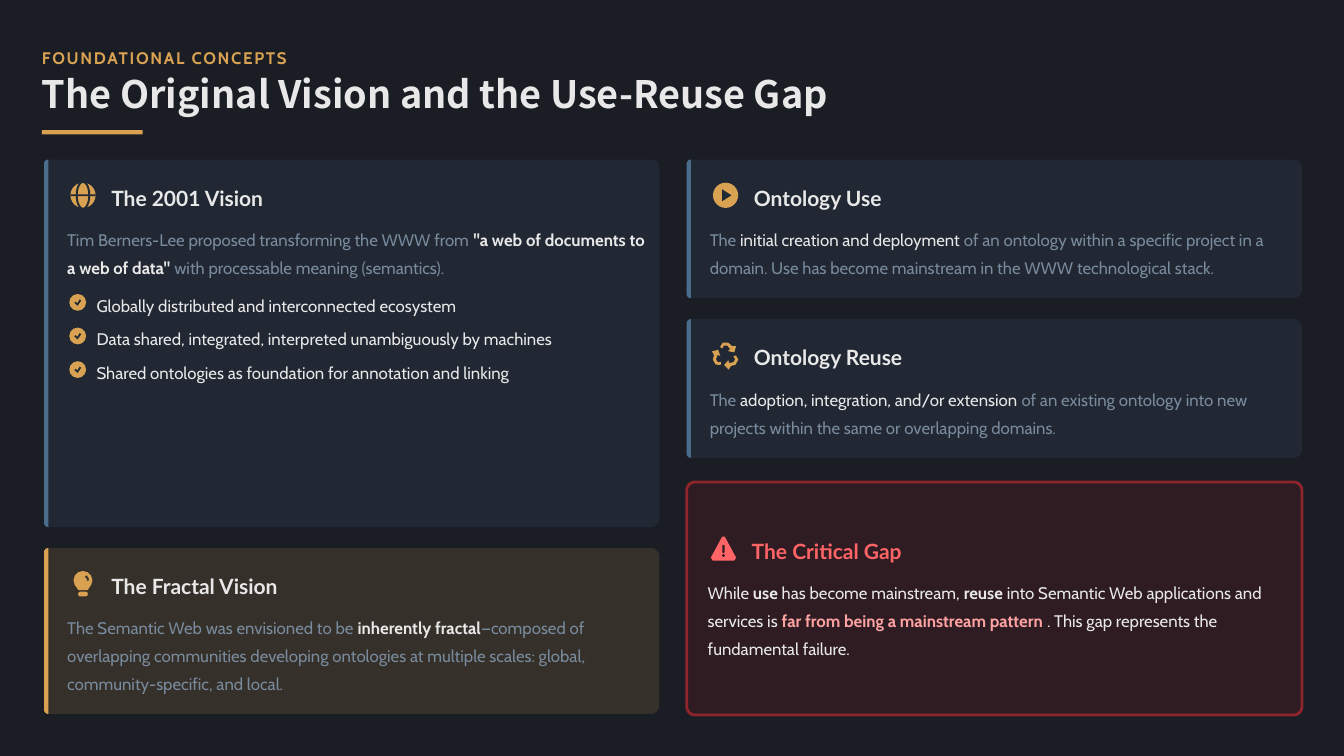
from math import cos, radians, sin

from lxml.etree import SubElement
from pptx import Presentation
from pptx.dml.color import RGBColor
from pptx.enum.shapes import MSO_SHAPE
from pptx.enum.text import MSO_ANCHOR
from pptx.oxml.ns import qn
from pptx.util import Inches, Pt

COLS, ROWS = 160, 90
BG, BLUE, GOLD, LIGHT, MUTED = "1A1D24", "4A6D8C", "D8A252", "E8E8E8", "788A9C"
MAROON, RED, CORAL, PINK = "82181A", "FB2C36", "FF6467", "FFA2A2"


def rgb(value):
    return RGBColor.from_string(value)


def blend(top, base, share):
    pairs = zip(bytes.fromhex(top), bytes.fromhex(base))
    return "".join(f"{round(a * share + b * (1 - share)):02X}" for a, b in pairs)


def fade(fill, percent):
    color = fill._xPr.find(f"{qn('a:solidFill')}/{qn('a:srgbClr')}")
    SubElement(color, qn("a:alpha")).set("val", str(percent * 1000))


class Deck:
    def __init__(self):
        self.prs = Presentation()
        self.prs.slide_width, self.prs.slide_height = Inches(40 / 3), Inches(7.5)
        self.unit = self.prs.slide_height / ROWS
        self.s = self.prs.slides.add_slide(self.prs.slide_layouts[6])
        self.s.background.fill.solid()
        self.s.background.fill.fore_color.rgb = rgb(BG)

    def grid(self, *values):
        return [round(v * self.unit) for v in values]

    def paint(self, sp, color, alpha=100):
        sp.shadow.inherit = False
        sp.line.fill.background()
        sp.fill.solid()
        sp.fill.fore_color.rgb = rgb(color)
        if alpha < 100:
            fade(sp.fill, alpha)
        return sp

    def shape(self, kind, x, y, w, h, color):
        return self.paint(self.s.shapes.add_shape(kind, *self.grid(x, y, w, h)), color)

    def disc(self, cx, cy, d, color):
        return self.shape(MSO_SHAPE.OVAL, cx - d / 2, cy - d / 2, d, d, color)

    def poly(self, points, color, alpha=100):
        start, *rest = [self.grid(*point) for point in points]
        builder = self.s.shapes.build_freeform(*start)
        builder.add_line_segments(rest, close=True)
        return self.paint(builder.convert_to_shape(), color, alpha)

    def panel(self, x, y, w, h, left, right, color, alpha=100):
        corners = [(x + left, y + left, left, 180), (x + w - right, y + right, right, 270),
                   (x + w - right, y + h - right, right, 0), (x + left, y + h - left, left, 90)]
        points = []
        for cx, cy, radius, start in corners:
            for turn in range(0, 91, 15) if radius else [0]:
                a = radians(start + turn)
                points.append((cx + radius * cos(a), cy + radius * sin(a)))
        return self.poly(points, color, alpha)

    def text(self, x, y, w, h, runs, size, font="Cabin", spacing=1.3, wrap=False, track=0):
        tf = self.s.shapes.add_textbox(*self.grid(x, y, w, h)).text_frame
        tf.margin_left = tf.margin_right = tf.margin_top = tf.margin_bottom = 0
        tf.vertical_anchor = MSO_ANCHOR.MIDDLE
        tf.word_wrap = wrap
        p = tf.paragraphs[0]
        p.line_spacing = spacing
        for words, color, bold in runs:
            r = p.add_run()
            r.text = words
            r.font.name, r.font.size, r.font.bold = font, Pt(size), bold
            r.font.color.rgb = rgb(color)
            rPr = r.font._element
            if track:
                rPr.set("spc", str(round(track * 100)))
            for tag in ("a:ea", "a:cs"):
                SubElement(rPr, qn(tag)).set("typeface", font)

    def globe(self, cx, cy, color, back):
        self.disc(cx, cy, 3, color)
        meridian = self.shape(MSO_SHAPE.OVAL, cx - 0.75, cy - 1.6, 1.5, 3.2, color)
        meridian.fill.background()
        meridian.line.color.rgb = rgb(back)
        meridian.line.width = Pt(1.4)
        self.shape(MSO_SHAPE.RECTANGLE, cx - 1.5, cy - 0.1, 3, 0.2, back)

    def bulb(self, cx, cy, color, back):
        self.disc(cx, cy - 0.4, 2.25, color)
        self.poly([(cx - 0.9, cy + 0.2), (cx + 0.9, cy + 0.2),
                   (cx + 0.57, cy + 0.75), (cx - 0.57, cy + 0.75)], color)
        self.panel(cx - 0.57, cy + 0.95, 1.14, 0.55, 0.25, 0.25, color)
        glint = self.shape(MSO_SHAPE.ARC, cx - 0.62, cy - 1, 1.24, 1.24, color)
        glint.fill.background()
        glint.adjustments[0], glint.adjustments[1] = 180, -90
        glint.line.color.rgb = rgb(back)
        glint.line.width = Pt(1.4)

    def play(self, cx, cy, color, back):
        self.disc(cx, cy, 3, color)
        self.poly([(cx - 0.4, cy - 0.7), (cx + 0.7, cy), (cx - 0.4, cy + 0.7)], back)

    def recycle(self, cx, cy, color, back):
        arrow = [(-0.65, -1.05), (-0.35, -1.55), (0.35, -1.55), (0.75, -1.15),
                 (1.25, -1.15), (1.05, -0.4), (0.3, -0.55), (0.55, -0.8),
                 (0.2, -1.2), (-0.2, -1.2), (-0.4, -0.85)]
        for a in (radians(turn) for turn in (0, 120, 240)):
            self.poly([(cx + x * cos(a) - y * sin(a), cy + 0.1 + x * sin(a) + y * cos(a))
                       for x, y in arrow], color)

    def warning(self, cx, cy, color, back):
        self.poly([(cx - 0.15, cy - 1.45), (cx + 0.15, cy - 1.45), (cx + 1.5, cy + 1.05),
                   (cx + 1.3, cy + 1.4), (cx - 1.3, cy + 1.4), (cx - 1.5, cy + 1.05)], color)
        self.panel(cx - 0.14, cy - 0.45, 0.28, 0.95, 0.13, 0.13, back)
        self.disc(cx, cy + 0.8, 0.32, back)

    def check(self, cx, cy, color, back):
        self.disc(cx, cy, 2, color)
        tick = [(-0.4, 0.05), (-0.25, -0.1), (-0.05, 0.1), (0.25, -0.35),
                (0.42, -0.22), (0, 0.4)]
        self.poly([(cx + x, cy + y) for x, y in tick], back)

    def card(self, x, y, h, icon, title, lines, runs, accent=BLUE, alert=False):
        w = 73.25
        if alert:
            back, color, dx, dy = blend(MAROON, BG, 0.2), CORAL, -0.25, 3.7
            sp = self.panel(x, y, w, h, 1, 1, MAROON, 20)
            sp.line.color.rgb = rgb(RED)
            sp.line.width = Pt(2)
            fade(sp.line.fill, 50)
        else:
            back, color, dx, dy = blend(accent, BG, 0.15), LIGHT, 0, 0
            self.panel(x, y, w, h, 0.5, 1, accent, 15)
            self.panel(x, y, 0.5, h, 0.5, 0, accent)
        x, y = x + dx, y + dy
        icon(x + 4.63, y + 4.25, CORAL if alert else GOLD, back)
        self.text(x + 8, y + 2.5, 23, 3.5, [(title, color, True)], 15, "Lato", 1.2)
        self.text(x + 2.75, y + 7.5, 69, 3.25 * lines, runs, 12, spacing=1.4, wrap=True)

    def checklist(self, x, y, items):
        back = blend(BLUE, BG, 0.15)
        for row, item in enumerate(items):
            top = y + 4 * row
            self.check(x + 1, top + 1, GOLD, back)
            self.text(x + 3.25, top - 0.5, 59, 3, [(item, LIGHT, False)], 12)


def main():
    deck = Deck()
    deck.text(5, 5, 151, 3, [("FOUNDATIONAL CONCEPTS", GOLD, True)], 12, track=1.2)
    deck.text(5, 9, 152, 5, [("The Original Vision and the Use-Reuse Gap", LIGHT, True)],
              27, "Noto Sans CJK SC", 0.9)
    deck.shape(MSO_SHAPE.RECTANGLE, 5, 15.5, 12, 0.5, GOLD)

    left, right = 5.25, 81.75
    deck.card(left, 19, 43.75, deck.globe, "The 2001 Vision", 2, [
        ("Tim Berners-Lee proposed transforming the WWW from ", MUTED, False),
        ('"a web of documents to a web of data"', LIGHT, True),
        (" with processable meaning (semantics).", MUTED, False)])
    deck.checklist(left + 3, 35, [
        "Globally distributed and interconnected ecosystem",
        "Data shared, integrated, interpreted unambiguously by machines",
        "Shared ontologies as foundation for annotation and linking"])
    deck.card(left, 65.25, 19.75, deck.bulb, "The Fractal Vision", 3, [
        ("The Semantic Web was envisioned to be ", MUTED, False),
        ("inherently fractal", LIGHT, True),
        ("—composed of overlapping communities developing ontologies at multiple scales: "
         "global, community-specific, and local.", MUTED, False)], GOLD)
    deck.card(right, 19, 16.5, deck.play, "Ontology Use", 2, [
        ("The ", MUTED, False), ("initial creation and deployment ", LIGHT, False),
        ("of an ontology within a specific project in a domain. Use has become mainstream "
         "in the WWW technological stack.", MUTED, False)])
    deck.card(right, 38, 16.5, deck.recycle, "Ontology Reuse", 2, [
        ("The ", MUTED, False), ("adoption, integration, and/or extension ", LIGHT, False),
        ("of an existing ontology into new projects within the same or overlapping domains.",
         MUTED, False)])
    deck.card(right, 57.38, 27.75, deck.warning, "The Critical Gap", 3, [
        ("While ", LIGHT, False), ("use", LIGHT, True),
        (" has become mainstream, ", LIGHT, False), ("reuse", LIGHT, True),
        (" into Semantic Web applications and services is ", LIGHT, False),
        ("far from being a mainstream pattern ", PINK, True),
        (". This gap represents the fundamental failure.", LIGHT, False)], alert=True)
    deck.prs.save("out.pptx")


if __name__ == "__main__":
    main()
